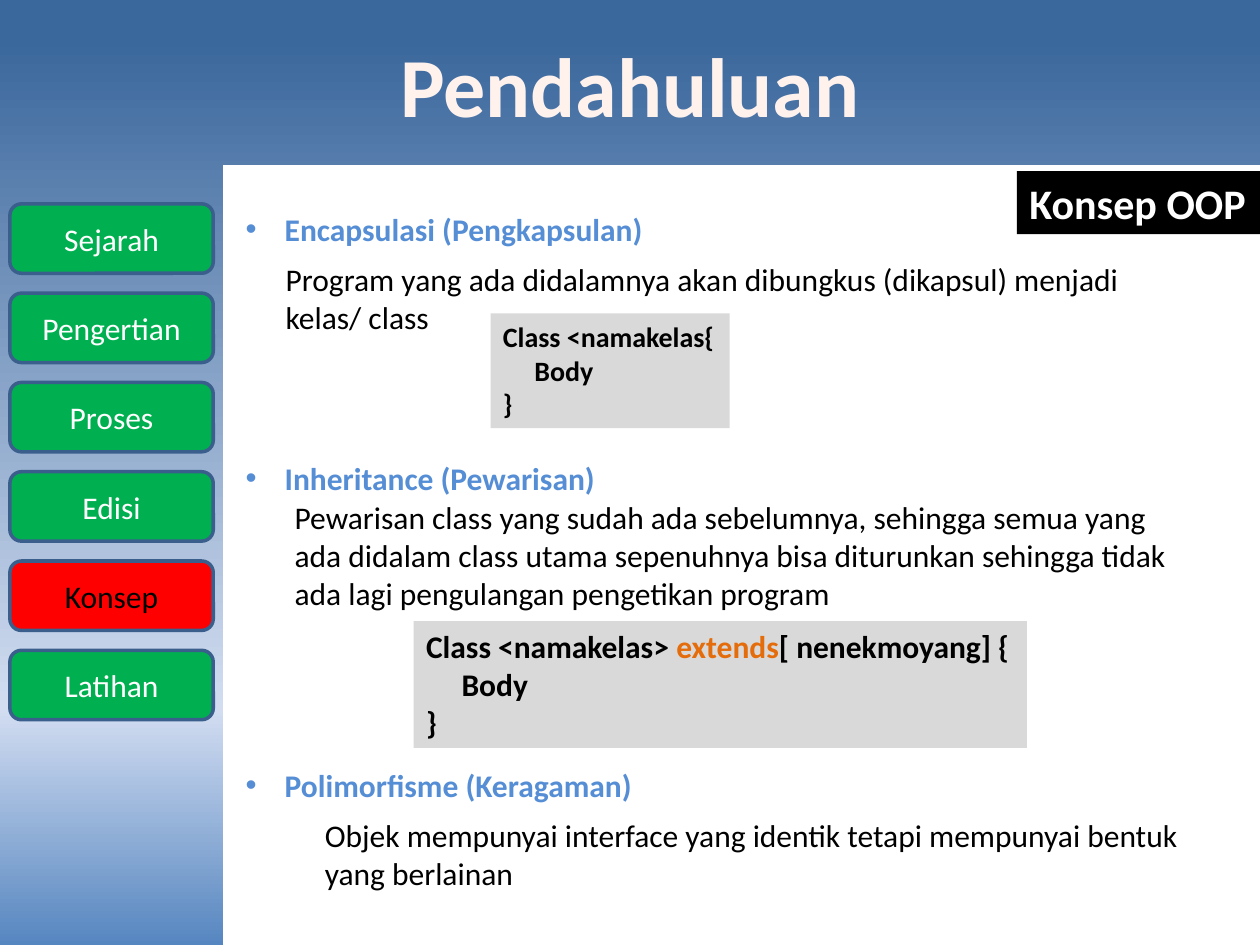
"""Build the slide on object-oriented concepts with its navigation menu."""
from copy import deepcopy
from dataclasses import dataclass
from typing import Any, Optional

from lxml.etree import SubElement
from pptx import Presentation
from pptx.dml.color import RGBColor
from pptx.enum.shapes import MSO_SHAPE
from pptx.enum.text import MSO_ANCHOR, PP_ALIGN
from pptx.oxml.ns import qn
from pptx.util import Cm, Pt

WHITE, BLACK, GREEN, RED = "FFFFFF", "000000", "00B050", "FF0000"
GREY, BLUE, ORANGE, BORDER = "D9D9D9", "558ED5", "E46C0A", "3A5F8C"
BACKGROUND_STOPS = [(0.04, "3A679C"), (0.75, "D2DDF1"), (1.0, "5686C0")]
MENU = ["Sejarah", "Pengertian", "Proses", "Edisi", "Konsep", "Latihan"]
ACTIVE_ITEM = "Konsep"
MENU_TOP, MENU_STEP = 4.11, 1.8


@dataclass
class TextBlock:
    """Text lines made of (text, colour) runs, placed in centimetres."""
    left: float
    top: float
    width: float
    height: float
    lines: list[list[tuple[str, str]]]
    size: int = 18
    bold: bool = False
    wrap: bool = False
    bullet: bool = False
    fill: Optional[str] = None


def heading(top: float, width: float, text: str) -> TextBlock:
    """Describe a bulleted concept heading."""
    return TextBlock(4.7, top, width, 1.03, [[(text, BLUE)]], bold=True, bullet=True)


def explanation(left: float, top: float, width: float, height: float, text: str) -> TextBlock:
    """Describe a wrapped explanation of a concept."""
    return TextBlock(left, top, width, height, [[(text, BLACK)]], wrap=True)


def code(left: float, top: float, width: float, height: float, size: int,
         first_line: list[tuple[str, str]]) -> TextBlock:
    """Describe a grey code box holding a class skeleton."""
    lines = [first_line, [("     Body", BLACK)], [("}", BLACK)]]
    return TextBlock(left, top, width, height, lines, size, bold=True, fill=GREY)


BLOCKS = [
    heading(4.1, 8.59, "Encapsulasi (Pengkapsulan)"),
    heading(9.13, 7.62, "Inheritance (Pewarisan)"),
    heading(15.31, 8.38, "Polimorfisme (Keragaman)"),
    explanation(5.51, 5.12, 18.6, 1.8, "Program yang ada didalamnya akan dibungkus "
                "(dikapsul) menjadi kelas/ class"),
    code(9.89, 6.32, 4.82, 2.31, 16, [("Class <namakelas{", BLACK)]),
    explanation(5.69, 9.92, 18.2, 2.56, "Pewarisan class yang sudah ada sebelumnya, "
                "sehingga semua yang ada didalam class utama sepenuhnya bisa diturunkan "
                "sehingga tidak ada lagi pengulangan pengetikan program"),
    code(8.34, 12.52, 12.36, 2.56, 18, [("Class <namakelas> ", BLACK), ("extends", ORANGE),
                                        ("[ nenekmoyang] {", BLACK)]),
    explanation(6.3, 16.33, 18.4, 2.56, "Objek mempunyai interface yang identik tetapi "
                "mempunyai bentuk yang berlainan"),
    TextBlock(20.5, 3.45, 4.92, 1.27, [[("Konsep OOP", WHITE)]], 24, bold=True, fill=BLACK),
]


def color(value: str) -> RGBColor:
    """Turn a hex string into a colour."""
    return RGBColor.from_string(value)


def apply_format(target: Any, values: dict[str, Any]) -> None:
    """Set every attribute named in the format values."""
    for name, value in values.items():
        setattr(target, name, value)


def format_font(font: Any, size: int, hex_color: str, bold: bool = False) -> None:
    """Give a font its typeface, size, weight and colour."""
    apply_format(font, {"name": "Calibri", "size": Pt(size), "bold": bold})
    font.color.rgb = color(hex_color)


def paint_background(slide: Any) -> None:
    """Fill the background with a vertical gradient."""
    fill = slide.background.fill
    fill.gradient()
    fill.gradient_angle = 270
    stop_list = slide.element.xpath(".//p:bg//a:gsLst")[0]
    stop_list.append(deepcopy(stop_list[-1]))
    for stop, (position, hex_color) in zip(fill.gradient_stops, BACKGROUND_STOPS):
        stop.position = position
        stop.color.rgb = color(hex_color)


def add_title(slide: Any, text: str) -> None:
    """Place and format the title placeholder."""
    title = slide.shapes.title
    apply_format(title, {"left": Cm(7.77), "top": Cm(0.53), "width": Cm(9.86), "height": Cm(2.31)})
    frame = title.text_frame
    frame.text = text
    apply_format(frame, {"word_wrap": False, "vertical_anchor": MSO_ANCHOR.MIDDLE})
    paragraph = frame.paragraphs[0]
    paragraph.alignment = PP_ALIGN.CENTER
    format_font(paragraph.runs[0].font, 48, "FFF2ED", True)


def add_panel(slide: Any) -> None:
    """Draw the white content panel."""
    panel = slide.shapes.add_shape(MSO_SHAPE.RECTANGLE, Cm(4.5), Cm(3.33), Cm(20.9), Cm(15.72))
    panel.shadow.inherit = False
    panel.fill.solid()
    panel.fill.fore_color.rgb = color(WHITE)
    panel.line.fill.background()


def add_menu_button(slide: Any, index: int, label: str) -> None:
    """Draw one menu button, highlighting the active item."""
    active = label == ACTIVE_ITEM
    button = slide.shapes.add_shape(MSO_SHAPE.ROUNDED_RECTANGLE, Cm(0.2),
                                    Cm(MENU_TOP + index * MENU_STEP), Cm(4.1), Cm(1.4))
    button.shadow.inherit = False
    button.fill.solid()
    button.fill.fore_color.rgb = color(RED if active else GREEN)
    button.line.color.rgb = color(BORDER)
    button.line.width = Pt(2)
    frame = button.text_frame
    frame.text = label
    frame.vertical_anchor = MSO_ANCHOR.MIDDLE
    paragraph = frame.paragraphs[0]
    paragraph.alignment = PP_ALIGN.CENTER
    format_font(paragraph.runs[0].font, 18, BLACK if active else WHITE)


def add_bullet(paragraph: Any) -> None:
    """Give a paragraph a hanging round bullet."""
    properties = paragraph._p.get_or_add_pPr()
    apply_indent = {"marL": Cm(0.79), "indent": -Cm(0.79)}
    for name, length in apply_indent.items():
        properties.set(name, str(int(length)))
    SubElement(properties, qn("a:buFont"), typeface="Arial")
    SubElement(properties, qn("a:buChar"), char="•")


def add_text_block(slide: Any, block: TextBlock) -> None:
    """Draw one block of text with its optional fill."""
    shape = slide.shapes.add_textbox(Cm(block.left), Cm(block.top), Cm(block.width), Cm(block.height))
    if block.fill:
        shape.fill.solid()
        shape.fill.fore_color.rgb = color(block.fill)
    frame = shape.text_frame
    frame.word_wrap = block.wrap
    for index, line in enumerate(block.lines):
        paragraph = frame.add_paragraph() if index else frame.paragraphs[0]
        if block.bullet:
            add_bullet(paragraph)
        for text, hex_color in line:
            run = paragraph.add_run()
            run.text = text
            format_font(run.font, block.size, hex_color, block.bold)


def main() -> None:
    """Assemble and save the presentation."""
    presentation = Presentation()
    apply_format(presentation, {"slide_width": Cm(25.4), "slide_height": Cm(19.05)})
    slide = presentation.slides.add_slide(presentation.slide_layouts[5])
    paint_background(slide)
    add_title(slide, "Pendahuluan")
    add_panel(slide)
    for index, label in enumerate(MENU):
        add_menu_button(slide, index, label)
    for block in BLOCKS:
        add_text_block(slide, block)
    presentation.save("out.pptx")


if __name__ == "__main__":
    main()
